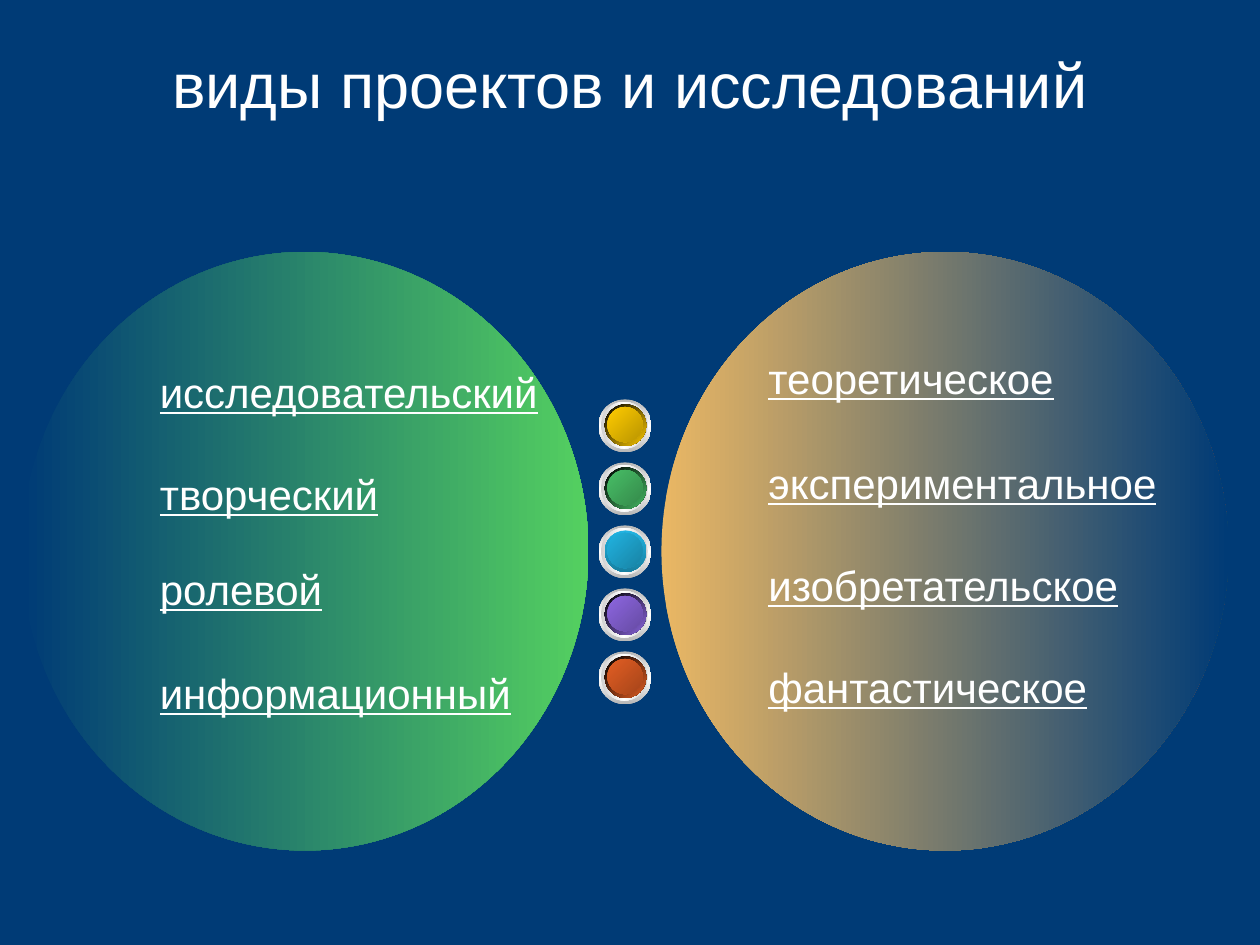
from copy import deepcopy
from dataclasses import dataclass

from pptx import Presentation
from pptx.dml.color import RGBColor
from pptx.enum.shapes import MSO_SHAPE
from pptx.enum.text import MSO_ANCHOR, MSO_AUTO_SIZE, PP_ALIGN
from pptx.oxml.ns import qn
from pptx.util import Inches, Pt

OVAL = MSO_SHAPE.OVAL
MIDDLE = MSO_ANCHOR.MIDDLE
GROW = MSO_AUTO_SIZE.SHAPE_TO_FIT_TEXT
CENTER = PP_ALIGN.CENTER


@dataclass(frozen=True)
class Theme:
    back: str = "003B76"
    text: str = "FFFFFF"
    green: str = "54D060"
    sand: str = "EAB764"
    rim: tuple = ("B6B6B6", "FFFFFF", "B6B6B6")
    band: tuple = ("D1D1D1", "FFFFFF", "D1D1D1")
    font: str = "Arial"
    head: int = 36
    item: int = 24


THEME = Theme()

LEFT = [
    ("исследовательский", 2.86, 3.23),
    ("творческий", 3.67, 1.95),
    ("ролевой", 4.42, 1.5),
    ("информационный", 5.25, 3.02),
]
RIGHT = [
    ("теоретическое", 2.75, 2.49),
    ("экспериментальное", 3.58, 3.31),
    ("изобретательское", 4.39, 3.01),
    ("фантастическое", 5.2, 2.76),
]
BEADS = [
    (("000000", "FFCC00"), 45, ("FFCC00", "BA9500")),
    (("000000", "48BE67"), 45, ("48BE67", "358B4B")),
    (("21B3E1", "1880A1"), 90, ("21B3E1", "1883A4")),
    (("000000", "8D67E1"), 45, ("8D67E1", "674BA4")),
    (("000000", "E35E23"), 45, ("E35E23", "A6451A")),
]


def style(frame, size, line=False):
    for run in frame.paragraphs[0].runs:
        run.font.name = THEME.font
        run.font.size = Pt(size)
        run.font.color.rgb = RGBColor.from_string(THEME.text)
        run.font.underline = line


def shade(shape, tones, angle):
    fill = shape.fill
    fill.gradient()
    fill.gradient_angle = -angle % 360
    stops = next(shape._element.iter(qn("a:gsLst")))
    for _ in tones[2:]:
        stops.append(deepcopy(stops[-1]))
    for i, (stop, tone) in enumerate(zip(fill.gradient_stops, tones)):
        stop.position = i / (len(tones) - 1)
        stop.color.rgb = RGBColor.from_string(tone)


def add_oval(shapes, x, y, w, h, tones, angle=0):
    oval = shapes.add_shape(OVAL, Inches(x), Inches(y), Inches(w), Inches(h))
    oval.shadow.inherit = False
    oval.line.fill.background()
    shade(oval, tones, angle)


def add_bead(slide, x, y, ring, angle, core):
    group = slide.shapes.add_group_shape()
    layers = [
        (0, 0.42, THEME.rim, 90),
        (0.02, 0.37, THEME.band, 0),
        (0.05, 0.33, ring, angle),
        (0.07, 0.28, core, 45),
    ]
    for inset, size, tones, turn in layers:
        top = y + min(inset, 0.04) if inset == 0.05 else y + min(inset, 0.06)
        add_oval(group.shapes, x + inset, top, size, size, tones, turn)


def add_title(slide, text):
    title = slide.shapes.title
    title.left, title.top = Inches(0), Inches(0.25)
    title.width, title.height = Inches(10), Inches(0.83)
    frame = title.text_frame
    frame.text = text
    frame.vertical_anchor = MIDDLE
    frame.paragraphs[0].alignment = CENTER
    style(frame, THEME.head)


def add_items(slide, x, items):
    for text, y, w in items:
        box = slide.shapes.add_textbox(
            Inches(x), Inches(y), Inches(w), Inches(0.5))
        frame = box.text_frame
        frame.text = text
        frame.word_wrap = False
        frame.auto_size = GROW
        style(frame, THEME.item, True)


def main():
    deck = Presentation()
    deck.slide_width, deck.slide_height = Inches(10), Inches(7.5)
    slide = deck.slides.add_slide(deck.slide_layouts[5])
    back = slide.background.fill
    back.solid()
    back.fore_color.rgb = RGBColor.from_string(THEME.back)

    add_title(slide, "виды проектов и исследований")
    add_oval(slide.shapes, 5.25, 2, 4.5, 4.75, (THEME.sand, THEME.back))
    add_oval(slide.shapes, 0.17, 2, 4.5, 4.75, (THEME.back, THEME.green))
    for i, bead in enumerate(BEADS):
        add_bead(slide, 4.75, 3.17 + i * 0.5, *bead)
    add_items(slide, 6, RIGHT)
    add_items(slide, 1.17, LEFT)
    deck.save("out.pptx")


if __name__ == "__main__":
    main()
